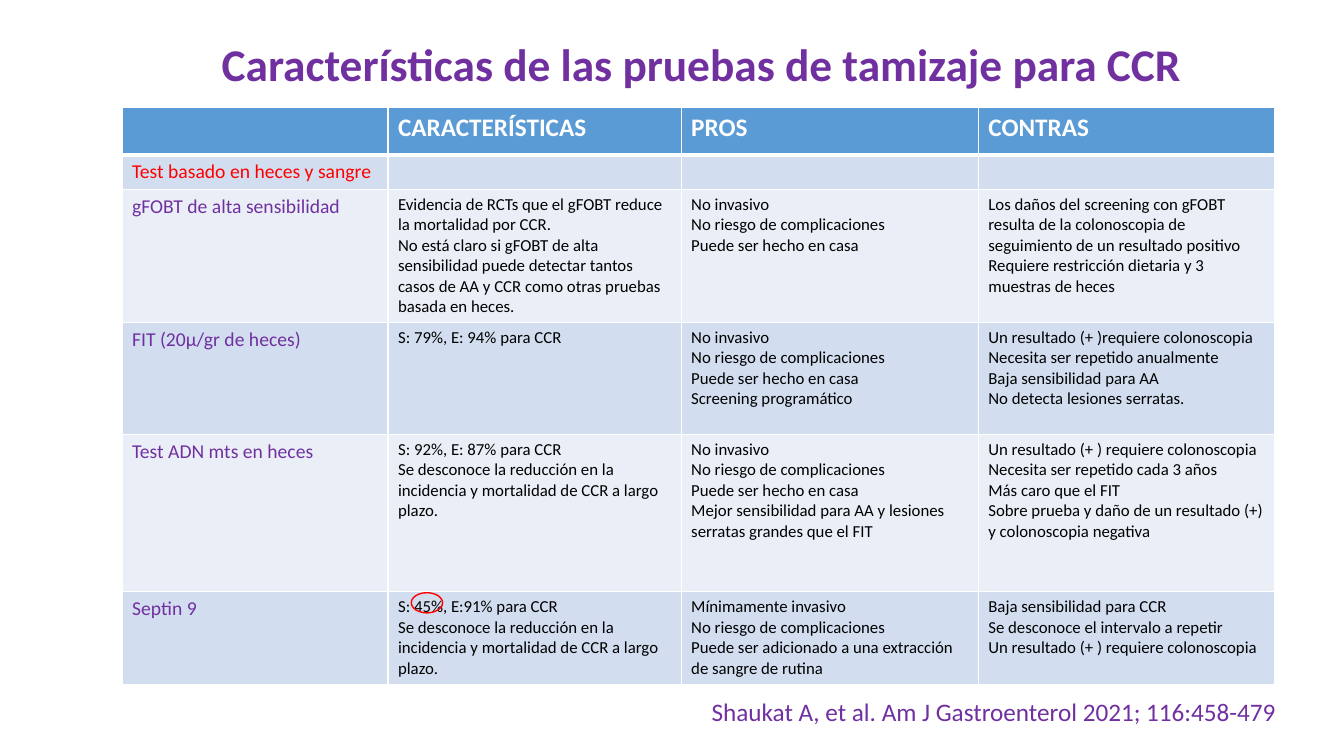
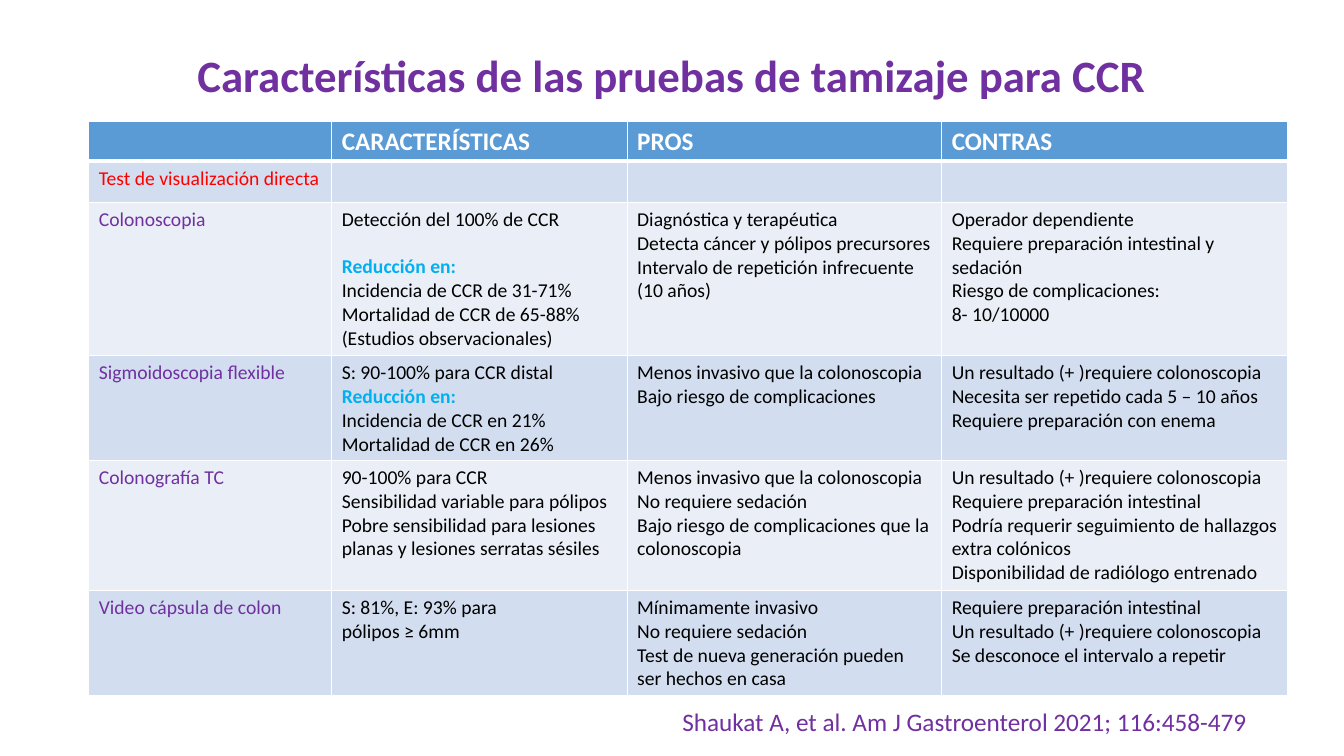
from dataclasses import dataclass

import lxml.etree
import pptx
import pptx.dml.color
import pptx.enum.shapes
import pptx.enum.text
import pptx.oxml.ns
import pptx.util

WIDTH, HEIGHT = pptx.util.Inches(13.33), pptx.util.Inches(7.5)
FONT = "Calibri"
PURPLE, RED, CYAN = "7030A0", "FF0000", "00B0F0"
BLACK, WHITE = "000000", "FFFFFF"
HEADER_FILL = "5B9BD5"
BAND_FILLS = ("D2DEEF", "EAEFF7")
HEADINGS = ("", "CARACTERÍSTICAS", "PROS", "CONTRAS")
HEADING_SIZE = LABEL_SIZE = 18
LABEL_SIZE = 14
TITLE = "Características de las pruebas de tamizaje para CCR"
CITATION = "Shaukat A, et al. Am J Gastroenterol 2021; 116:458-479"


@dataclass(frozen=True)
class Box:
    """Place and size in percent of the slide's width and height."""
    x: float
    y: float
    w: float
    h: float

    def emu(self) -> tuple[int, int, int, int]:
        return (int(WIDTH * self.x / 100), int(HEIGHT * self.y / 100),
                int(WIDTH * self.w / 100), int(HEIGHT * self.h / 100))


@dataclass(frozen=True)
class Style:
    size: float
    color: str
    bold: bool = False


@dataclass(frozen=True)
class Accent:
    """A highlighted line, with the space in points above it."""
    text: str
    before: float = 0


Line = str | Accent


@dataclass(frozen=True)
class Test:
    name: str
    features: tuple[Line, ...]
    pros: tuple[Line, ...]
    cons: tuple[Line, ...]


@dataclass(frozen=True)
class Page:
    """Column and row weights share out the size of the table."""
    title_box: Box
    title_size: float
    table_box: Box
    columns: tuple[float, ...]
    rows: tuple[float, ...]
    body_size: float
    section: str
    tests: tuple[Test, ...]
    citation_box: Box
    circle: Box | None = None


LONG_TERM = ("Se desconoce la reducción en la incidencia y mortalidad "
             "de CCR a largo plazo.")
SAFE = ("No invasivo", "No riesgo de complicaciones", "Puede ser hecho en casa")
NEEDS_COLONOSCOPY = "Un resultado (+ )requiere colonoscopia"
NEEDS_COLONOSCOPY_SPACED = "Un resultado (+ ) requiere colonoscopia"
UNKNOWN_INTERVAL = "Se desconoce el intervalo a repetir"
NEEDS_PREPARATION = "Requiere preparación intestinal"
LESS_INVASIVE = "Menos invasivo que la colonoscopia"
NO_SEDATION = "No requiere sedación"
REDUCTION = "Reducción en:"

STOOL_AND_BLOOD = Page(
    title_box=Box(9.08, 4.67, 86.25, 8.4),
    title_size=32.4,
    table_box=Box(9.08, 14.27, 85.75, 76.27),
    columns=(2.64, 2.91, 2.95, 2.94),
    rows=(0.47, 0.34, 1.32, 1.11, 1.56, 0.92),
    body_size=12,
    section="Test basado en heces y sangre",
    tests=(
        Test("gFOBT de alta sensibilidad",
             ("Evidencia de RCTs que el gFOBT reduce la mortalidad por CCR.",
              "No está claro si gFOBT de alta sensibilidad puede detectar tantos "
              "casos de AA y CCR como otras pruebas basada en heces."),
             SAFE,
             ("Los daños del screening con gFOBT resulta de la colonoscopia de "
              "seguimiento de un resultado positivo",
              "Requiere restricción dietaria y 3 muestras de heces")),
        Test("FIT (20µ/gr de heces)",
             ("S: 79%, E: 94% para CCR",),
             SAFE + ("Screening programático",),
             (NEEDS_COLONOSCOPY, "Necesita ser repetido anualmente",
              "Baja sensibilidad para AA", "No detecta lesiones serratas.")),
        Test("Test ADN mts en heces",
             ("S: 92%, E: 87% para CCR", LONG_TERM),
             SAFE + ("Mejor sensibilidad para AA y lesiones serratas grandes "
                     "que el FIT",),
             (NEEDS_COLONOSCOPY_SPACED, "Necesita ser repetido cada 3 años",
              "Más caro que el FIT",
              "Sobre prueba y daño de un resultado (+) y colonoscopia negativa")),
        Test("Septin 9",
             ("S: 45%, E:91% para CCR", LONG_TERM),
             ("Mínimamente invasivo", "No riesgo de complicaciones",
              "Puede ser adicionado a una extracción de sangre de rutina"),
             ("Baja sensibilidad para CCR", UNKNOWN_INTERVAL,
              NEEDS_COLONOSCOPY_SPACED)),
    ),
    citation_box=Box(52.21, 91.47, 43.96, 5.33),
    circle=Box(30.6, 78.4, 2.33, 2.67),
)

DIRECT_VIEW = Page(
    title_box=Box(7.65, 6.27, 84.7, 8.13),
    title_size=32,
    table_box=Box(6.6, 16, 89.2, 76),
    columns=(2.41, 2.93, 3.12, 3.43),
    rows=(0.4, 0.41, 1.52, 1.04, 1.29, 1.04),
    body_size=14,
    section="Test de visualización directa",
    tests=(
        Test("Colonoscopia",
             ("Detección del 100% de CCR", Accent(REDUCTION, before=17),
              "Incidencia de CCR de 31-71%", "Mortalidad de CCR de 65-88%",
              "(Estudios observacionales)"),
             ("Diagnóstica y terapéutica", "Detecta cáncer y pólipos precursores",
              "Intervalo de repetición infrecuente", "(10 años)"),
             ("Operador dependiente",
              "Requiere preparación intestinal y sedación",
              "Riesgo de complicaciones:", "8- 10/10000")),
        Test("Sigmoidoscopia flexible",
             ("S: 90-100% para CCR distal", Accent(REDUCTION),
              "Incidencia de CCR en 21%", "Mortalidad de CCR en 26%"),
             (LESS_INVASIVE, "Bajo riesgo de complicaciones"),
             (NEEDS_COLONOSCOPY, "Necesita ser repetido cada 5 – 10 años",
              "Requiere preparación con enema")),
        Test("Colonografía TC",
             ("90-100% para CCR", "Sensibilidad variable para pólipos",
              "Pobre sensibilidad para lesiones planas y lesiones serratas sésiles"),
             (LESS_INVASIVE, NO_SEDATION,
              "Bajo riesgo de complicaciones que la colonoscopia"),
             (NEEDS_COLONOSCOPY, NEEDS_PREPARATION,
              "Podría requerir seguimiento de hallazgos extra colónicos",
              "Disponibilidad de radiólogo entrenado")),
        Test("Video cápsula de colon",
             ("S: 81%, E: 93% para", "pólipos ≥ 6mm"),
             ("Mínimamente invasivo", NO_SEDATION,
              "Test de nueva generación pueden ser hechos en casa"),
             (NEEDS_PREPARATION, NEEDS_COLONOSCOPY, UNKNOWN_INTERVAL)),
    ),
    citation_box=Box(50.03, 92.8, 43.96, 5.33),
)


def rgb(color: str) -> pptx.dml.color.RGBColor:
    return pptx.dml.color.RGBColor.from_string(color)


def add_run(p, text: str, style: Style) -> None:
    r = p.add_run()
    r.text = text
    r.font.name = FONT
    r.font.size = pptx.util.Pt(style.size)
    r.font.bold = style.bold
    r.font.color.rgb = rgb(style.color)


def add_text(s, box: Box, text: str, style: Style, wrap: bool = True):
    tf = s.shapes.add_textbox(*box.emu()).text_frame
    tf.word_wrap = wrap
    add_run(tf.paragraphs[0], text, style)
    return tf


def add_title(s, page: Page) -> None:
    tf = add_text(s, page.title_box, TITLE, Style(page.title_size, PURPLE, True))
    tf.vertical_anchor = pptx.enum.text.MSO_ANCHOR.MIDDLE
    tf.paragraphs[0].alignment = pptx.enum.text.PP_ALIGN.CENTER
    tf.paragraphs[0].line_spacing = 0.9


def set_borders(cell, top: float, bottom: float) -> None:
    """Draw white cell edges; widths are in points."""
    qn = pptx.oxml.ns.qn
    tc_pr = cell._tc.get_or_add_tcPr()
    for tag, width in (("lnL", 1), ("lnR", 1), ("lnT", top), ("lnB", bottom)):
        ln = lxml.etree.SubElement(tc_pr, qn(f"a:{tag}"), w=str(pptx.util.Pt(width)))
        fill = lxml.etree.SubElement(ln, qn("a:solidFill"))
        lxml.etree.SubElement(fill, qn("a:srgbClr"), val=WHITE)


def fill_cell(cell, lines: tuple[Line, ...], style: Style) -> None:
    tf = cell.text_frame
    for i, line in enumerate(lines):
        p = tf.add_paragraph() if i else tf.paragraphs[0]
        if isinstance(line, Accent):
            p.space_before = pptx.util.Pt(line.before)
            add_run(p, line.text, Style(style.size, CYAN, True))
        elif line:
            add_run(p, line, style)
        else:
            # An empty cell must not stretch its row
            lxml.etree.SubElement(p._p, pptx.oxml.ns.qn("a:endParaRPr"),
                                  sz=str(int(style.size * 100)))


def share(total: int, weights: tuple[float, ...]) -> list[int]:
    return [int(total * w / sum(weights)) for w in weights]


def add_tests_table(s, page: Page) -> None:
    x, y, w, h = page.table_box.emu()
    tbl = s.shapes.add_table(len(page.rows), len(page.columns), x, y, w, h).table
    tbl.first_row = tbl.horz_banding = False
    for column, width in zip(tbl.columns, share(w, page.columns)):
        column.width = width
    for row, height in zip(tbl.rows, share(h, page.rows)):
        row.height = height

    content = [tuple((heading,) for heading in HEADINGS),
               ((page.section,), ("",), ("",), ("",))]
    content += [((t.name,), t.features, t.pros, t.cons) for t in page.tests]
    for i, cells in enumerate(content):
        for j, lines in enumerate(cells):
            if i == 0:
                style = Style(HEADING_SIZE, WHITE, True)
            elif j == 0:
                style = Style(LABEL_SIZE, RED if i == 1 else PURPLE)
            else:
                style = Style(page.body_size, BLACK)
            cell = tbl.cell(i, j)
            set_borders(cell, 3 if i == 1 else 1, 3 if i == 0 else 1)
            cell.fill.solid()
            cell.fill.fore_color.rgb = rgb(BAND_FILLS[(i - 1) % 2] if i else HEADER_FILL)
            fill_cell(cell, lines, style)


def add_circle(s, box: Box) -> None:
    sp = s.shapes.add_shape(pptx.enum.shapes.MSO_SHAPE.OVAL, *box.emu())
    sp.shadow.inherit = False
    sp.fill.background()
    sp.line.color.rgb = rgb(RED)
    sp.line.width = pptx.util.Pt(1)


def add_page(prs, page: Page) -> None:
    s = prs.slides.add_slide(prs.slide_layouts[6])
    add_title(s, page)
    add_tests_table(s, page)
    add_text(s, page.citation_box, CITATION, Style(18, PURPLE), wrap=False)
    if page.circle:
        add_circle(s, page.circle)


def main() -> None:
    prs = pptx.Presentation()
    prs.slide_width, prs.slide_height = WIDTH, HEIGHT
    for page in (STOOL_AND_BLOOD, DIRECT_VIEW):
        add_page(prs, page)
    prs.save("out.pptx")


if __name__ == "__main__":
    main()
